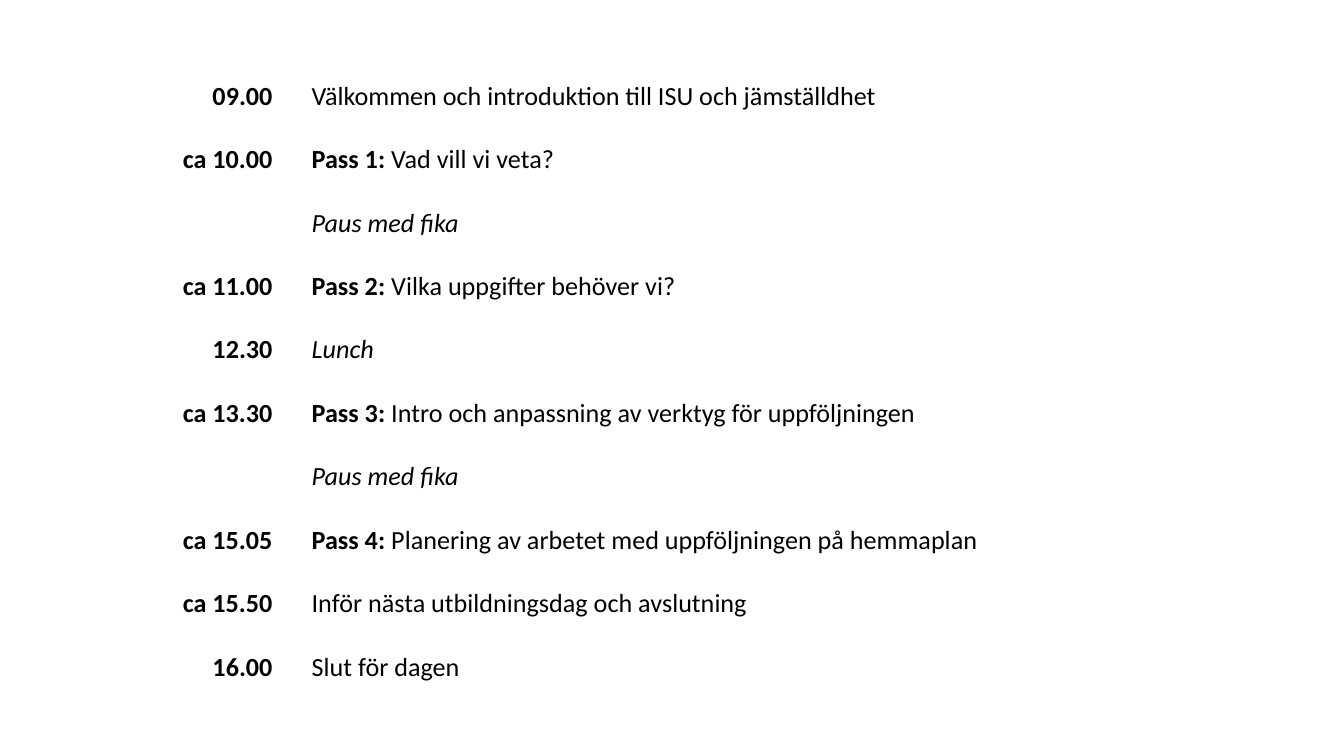
import pptx
import pptx.dml.color
import pptx.enum.text
import pptx.util

Pt = pptx.util.Pt
BLACK = pptx.dml.color.RGBColor(0x00, 0x00, 0x00)
ALIGN = pptx.enum.text.PP_ALIGN

COLUMN_WIDTHS = [77, 15, 483]
ROW_HEIGHT = 34
CELL_FORMAT = {
    "margin_left": Pt(3),
    "margin_top": Pt(1.5),
    "margin_right": Pt(3),
    "margin_bottom": Pt(0),
    "vertical_anchor": pptx.enum.text.MSO_ANCHOR.MIDDLE,
}
PARAGRAPH_FORMAT = {"line_spacing": 1.15, "space_after": Pt(3)}
FONT_FORMAT = {"name": "Calibri", "size": Pt(14)}

# Time, bold session label, activity, whether it is a break
AGENDA = [
    ("09.00", "", "Välkommen och introduktion till ISU och jämställdhet", False),
    ("ca 10.00", "Pass 1:", " Vad vill vi veta?", False),
    ("", "", "Paus med fika", True),
    ("ca 11.00", "Pass 2:", " Vilka uppgifter behöver vi?", False),
    ("12.30", "", "Lunch", True),
    ("ca 13.30", "Pass 3:", " Intro och anpassning av verktyg för uppföljningen", False),
    ("", "", "Paus med fika", True),
    ("ca 15.05", "Pass 4:", " Planering av arbetet med uppföljningen på hemmaplan", False),
    ("ca 15.50", "", "Inför nästa utbildningsdag och avslutning", False),
    ("16.00", "", "Slut för dagen", False),
]


def write_cell(cell, align, runs):
    """Fill a cell with (text, bold, italic) runs, skipping empty ones."""
    p = cell.text_frame.paragraphs[0]
    p.alignment = align
    for name, value in PARAGRAPH_FORMAT.items():
        setattr(p, name, value)
    for text, bold, italic in runs:
        if not text:
            continue
        r = p.add_run()
        r.text = text
        for name, value in FONT_FORMAT.items():
            setattr(r.font, name, value)
        r.font.bold = bold
        r.font.italic = italic
        r.font.color.rgb = BLACK


prs = pptx.Presentation()
prs.slide_width = Pt(720)
prs.slide_height = Pt(405)
s = prs.slides.add_slide(prs.slide_layouts[6])

table = s.shapes.add_table(
    len(AGENDA), len(COLUMN_WIDTHS), Pt(72), Pt(32.5),
    Pt(sum(COLUMN_WIDTHS)), Pt(ROW_HEIGHT * len(AGENDA)),
).table
table.first_row = False
table.horz_banding = False
for column, width in zip(table.columns, COLUMN_WIDTHS):
    column.width = Pt(width)
for row in table.rows:
    row.height = Pt(ROW_HEIGHT)

for cell in table.iter_cells():
    cell.fill.background()
    for name, value in CELL_FORMAT.items():
        setattr(cell, name, value)

for i, (time, label, activity, is_break) in enumerate(AGENDA):
    write_cell(table.cell(i, 0), ALIGN.RIGHT, [(time, True, False)])
    write_cell(table.cell(i, 2), ALIGN.LEFT,
               [(label, True, False), (activity, False, is_break)])

prs.save("out.pptx")
